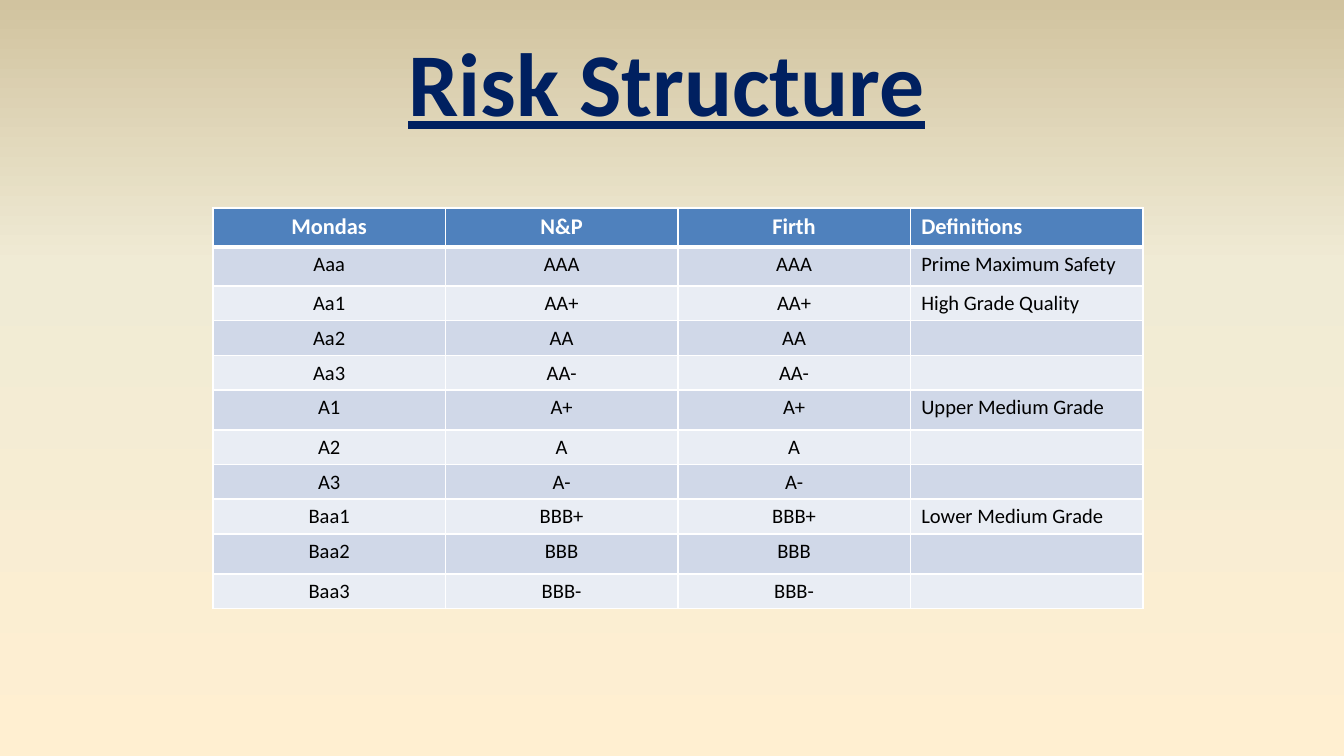
"""Build a slide that compares credit rating scales in a table."""
from copy import deepcopy

from lxml.etree import SubElement
from pptx import Presentation
from pptx.dml.color import RGBColor
from pptx.enum.text import MSO_AUTO_SIZE, PP_ALIGN
from pptx.oxml.ns import qn
from pptx.util import Inches, Pt

CENTER, LEFT = PP_ALIGN.CENTER, PP_ALIGN.LEFT
FIT_SHAPE = MSO_AUTO_SIZE.SHAPE_TO_FIT_TEXT
SCALE = Inches(10) / 1344
NAVY = RGBColor(0x00, 0x20, 0x60)
BLUE = RGBColor(0x4F, 0x81, 0xBD)
BAND = RGBColor(0xD0, 0xD8, 0xE8)
PALE = RGBColor(0xE9, 0xED, 0xF4)
WHITE = RGBColor(0xFF, 0xFF, 0xFF)
BLACK = RGBColor(0x00, 0x00, 0x00)
CREAM = RGBColor(0xFF, 0xEF, 0xD1)
SAND = RGBColor(0xF0, 0xEB, 0xD5)
TAN = RGBColor(0xD1, 0xC3, 0x9F)

RATINGS = [
    ("Mondas", "N&P", "Firth", "Definitions"),
    ("Aaa", "AAA", "AAA", "Prime Maximum Safety"),
    ("Aa1", "AA+", "AA+", "High Grade Quality"),
    ("Aa2", "AA", "AA", ""),
    ("Aa3", "AA-", "AA-", ""),
    ("A1", "A+", "A+", "Upper Medium Grade"),
    ("A2", "A", "A", ""),
    ("A3", "A-", "A-", ""),
    ("Baa1", "BBB+", "BBB+", "Lower Medium Grade"),
    ("Baa2", "BBB", "BBB", ""),
    ("Baa3", "BBB-", "BBB-", ""),
]
ROW_HEIGHTS = [39, 39, 34, 32, 31, 40, 34, 32, 31, 40, 34]


def px(*lengths):
    return [round(length * SCALE) for length in lengths]


class SlideWriter:
    """Holds the text style and the current slide."""

    def __init__(self, page, font_name):
        self.page = page
        self.font_name = font_name

    def background(self, stops, angle):
        fill = self.page.background.fill
        fill.gradient()
        fill.gradient_angle = angle
        stop_list = self.page._element.find(".//" + qn("a:gsLst"))
        stop_list.append(deepcopy(stop_list[-1]))
        for stop, (position, color) in zip(fill.gradient_stops, stops):
            stop.position = position
            stop.color.rgb = color

    def set_text(self, para, text, size, color, bold, align):
        para.text = text
        para.alignment = align
        font = para.font
        font.name, font.size, font.bold = self.font_name, Pt(size), bold
        font.color.rgb = color
        if not text:
            SubElement(para._p, qn("a:endParaRPr"), sz=str(size * 100))

    def title(self, text, left, top, width, height):
        box = self.page.shapes.add_textbox(*px(left, top, width, height))
        frame = box.text_frame
        frame.word_wrap = False
        frame.auto_size = FIT_SHAPE
        para = frame.paragraphs[0]
        self.set_text(para, text, 48, NAVY, True, CENTER)
        para.font.underline = True

    def borders(self, cell, bottom):
        properties = cell._tc.get_or_add_tcPr()
        for side, weight in (("L", 1), ("R", 1), ("T", 1), ("B", bottom)):
            line = SubElement(properties, qn("a:ln" + side), w=str(int(Pt(weight))))
            solid = SubElement(line, qn("a:solidFill"))
            SubElement(solid, qn("a:srgbClr"), val=str(WHITE))

    def table(self, rows, heights, left, top, width):
        frame = self.page.shapes.add_table(
            len(rows), len(rows[0]), *px(left, top, width, sum(heights)))
        table = frame.table
        for column in table.columns:
            column.width = px(width / len(rows[0]))[0]
        for index, (values, height) in enumerate(zip(rows, heights)):
            table.rows[index].height = px(height)[0]
            header = index == 0
            fill = BLUE if header else BAND if index % 2 else PALE
            size, color = (12, WHITE) if header else (11, BLACK)
            for number, value in enumerate(values):
                cell = table.cell(index, number)
                cell.margin_left, cell.margin_right = px(11, 11)
                cell.margin_top, cell.margin_bottom = px(5, 5)
                self.borders(cell, 3 if index == 0 else 1)
                cell.fill.solid()
                cell.fill.fore_color.rgb = fill
                align = LEFT if number == len(values) - 1 else CENTER
                para = cell.text_frame.paragraphs[0]
                self.set_text(para, value, size, color, header, align)


def main():
    deck = Presentation()
    deck.slide_width, deck.slide_height = px(1344, 756)
    page = deck.slides.add_slide(deck.slide_layouts[6])
    writer = SlideWriter(page, "Calibri")
    writer.background([(0, CREAM), (0.65, SAND), (1, TAN)], 90)
    writer.title("Risk Structure", 392, 20, 550, 122)
    writer.table(RATINGS, ROW_HEIGHTS, 213, 208, 930)
    deck.save("out.pptx")


if __name__ == "__main__":
    main()
